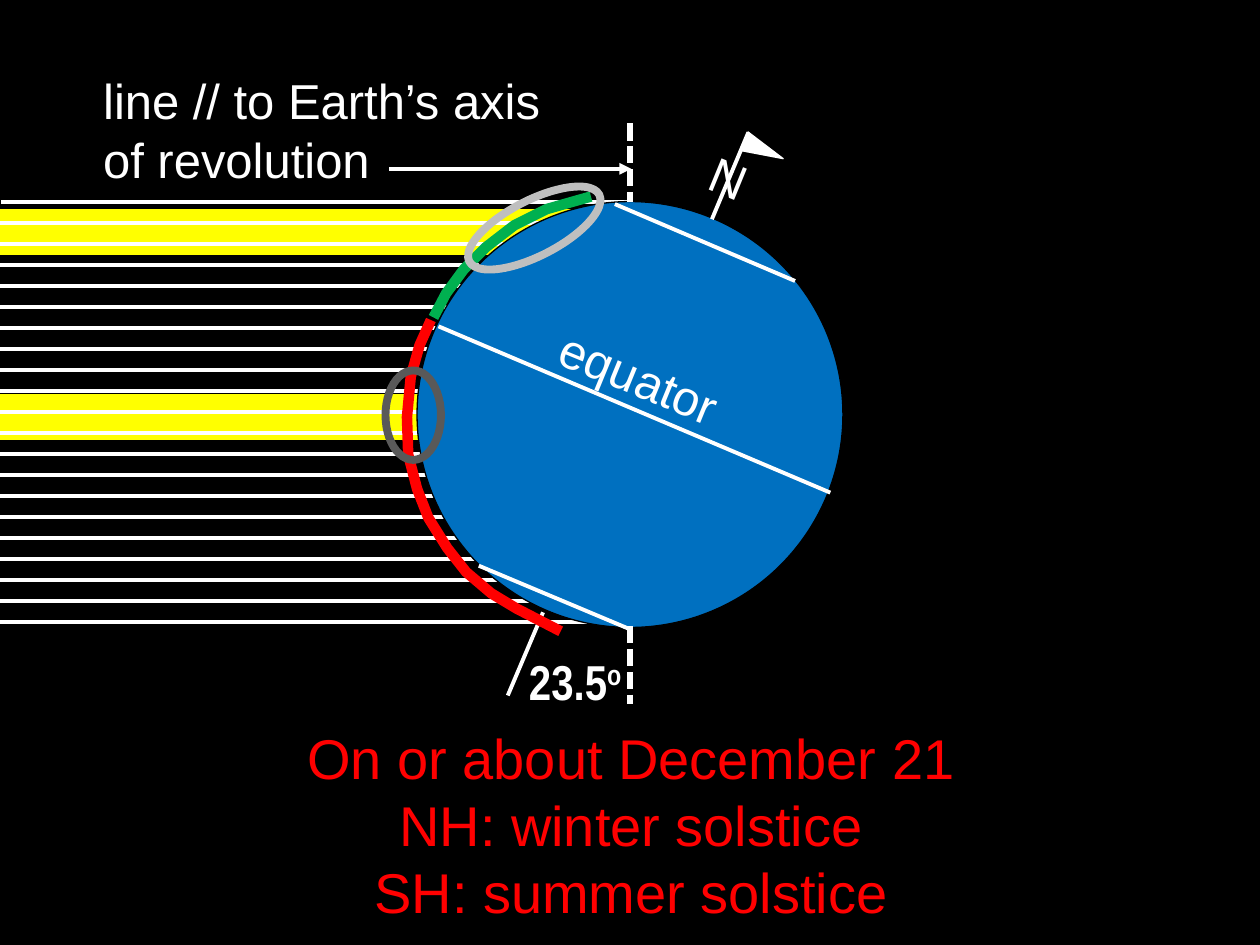
from lxml.etree import SubElement
from pptx import Presentation
from pptx.dml.color import RGBColor
from pptx.enum.dml import MSO_LINE
from pptx.enum.shapes import MSO_CONNECTOR, MSO_SHAPE as FORM
from pptx.enum.text import MSO_ANCHOR, MSO_AUTO_SIZE, PP_ALIGN as ALIGN
from pptx.oxml.ns import qn
from pptx.util import Inches, Pt

hex_color = RGBColor.from_string
WHITE, BLACK, RED = "FFFFFF", "000000", "FF0000"
TILT = 22.3

deck = Presentation()
deck.slide_width, deck.slide_height = Inches(10), Inches(7.5)
slide = deck.slides.add_slide(deck.slide_layouts[6])
slide.background.fill.solid()
slide.background.fill.fore_color.rgb = hex_color(BLACK)
canvas = slide.shapes
CELL = deck.slide_width / 100  # the slide is a grid of 100 columns by 75 rows


def draw(shapes, form, box, line=WHITE, weight=2.25, fill=None, turn=0):
    """Add a preset shape, or a straight line from (x1, y1) to (x2, y2) if form is None."""
    place = [round(n * CELL) for n in box]
    if form is None:
        item = shapes.add_connector(MSO_CONNECTOR.STRAIGHT, *place)
    else:
        item = shapes.add_shape(form, *place)
        item.rotation = turn
        item.shadow.inherit = False
        if fill:
            item.fill.solid()
            item.fill.fore_color.rgb = hex_color(fill)
        else:
            item.fill.background()
    item.line.color.rgb = hex_color(line)
    item.line.width = Pt(weight)
    if form is None:
        SubElement(item.line._ln.getparent(), qn("a:effectLst"))
    return item


def write(shapes, box, lines, size=28, color=WHITE, font="Arial", align=ALIGN.LEFT, turn=0):
    label = shapes.add_textbox(*[round(n * CELL) for n in box])
    label.rotation = turn
    frame = label.text_frame
    frame.word_wrap = False
    frame.auto_size = MSO_AUTO_SIZE.SHAPE_TO_FIT_TEXT
    frame.vertical_anchor = MSO_ANCHOR.MIDDLE
    frame.text = "\n".join(lines)
    for paragraph in frame.paragraphs:
        paragraph.alignment = align
        for name, value in {"size": Pt(size), "name": font}.items():
            setattr(paragraph.runs[0].font, name, value)
        paragraph.runs[0].font.color.rgb = hex_color(color)
    return frame


# Sunlight: two equal beams and evenly spaced parallel rays
for beam in [(-3.2, 31.2, 38.8, 3.8), (-2.9, 16.5, 51.2, 3.8)]:
    draw(canvas, FORM.RECTANGLE, beam, BLACK, 0.75, "FFFF00")

ray_ends = [
    (50.1, 0.1), (48.5, -1.2), (46.8, -1.2), (45.1, -2.1), (43.5, -1.8), (41.8, -1.5),
    (40.1, -3.2), (38.5, -2.2), (36.8, -2.1), (35.1, -5.2), (34.2, -5.4), (34.3, -4.8),
    (39.5, -3.8), (37.8, -5.5), (36.1, -2.5), (42.3, -1), (40.6, -2.7), (38.9, -4.3),
    (42.1, -1.2), (43.6, -3), (47.1, -3.4),
]
rays = canvas.add_group_shape().shapes
for i, (right, left) in enumerate(ray_ends):
    row = 16 + i * 5 / 3
    draw(rays, None, (right, row, left, row))

write(canvas, (7.2, 5.1, 38.2, 10.4), ["line // to Earth’s axis", "of revolution"])

# Earth, its axis and the line parallel to the axis of revolution
draw(canvas, FORM.OVAL, (33.1, 16, 33.8, 33.8), BLACK, 0.75, "0070C0")
draw(canvas, None, (43.1, 48.6, 40.3, 55.2))
for top, bottom in [(9.8, 16), (49.7, 55.9)]:
    draw(canvas, None, (50, top, 50, bottom), weight=3.25).line.dash_style = MSO_LINE.SQUARE_DOT

north = canvas.add_group_shape().shapes
write(north, (55.5, 11.2, 4.9, 5.7), ["N"], turn=TILT)
draw(north, None, (59.4, 10.5, 56.5, 17.4))
draw(north, FORM.ISOSCELES_TRIANGLE, (59.8, 10.2, 1.6, 3.4), weight=0.75, fill=WHITE, turn=114)

angle = write(canvas, (41, 51.2, 9.6, 5.7), ["23.5"], font="Arial Narrow").paragraphs[0]
degree = angle.add_run()
degree.text = "o"
degree.font.size, degree.font.name = Pt(28), "Arial Narrow"
degree.font.color.rgb = hex_color(WHITE)
degree.font._element.set("baseline", "30000")
for run in angle.runs:
    run.font.bold = True

pointer = draw(canvas, None, (30.9, 13.4, 50.1, 13.4))
SubElement(pointer.line._ln, qn("a:tailEnd"), type="triangle")

# Lit arcs of the northern and southern hemispheres
arcs = {
    "00B050": [(34.4, 25.2), (35.4, 23.3), (36.8, 21.4), (38.6, 19.6), (40.8, 17.9),
               (43.4, 16.6), (46.9, 15.6)],
    RED: [(34.2, 25.4), (33.3, 27.4), (32.6, 29.9), (32.3, 33.1), (32.4, 36.1), (33.1, 38.8),
          (34, 41.1), (35.5, 43.5), (37, 45.4), (39, 47.1), (41, 48.3), (44.1, 49.9), (44.5, 50.1)],
}
for color, knots in arcs.items():
    points = [(round(x * CELL), round(y * CELL)) for x, y in knots]
    outline = canvas.build_freeform(*points[0])
    outline.add_line_segments(points[1:], close=False)
    arc = outline.convert_to_shape()
    arc.shadow.inherit = False
    arc.fill.background()
    arc.line.color.rgb = hex_color(color)
    arc.line.width = Pt(6)
    SubElement(arc.line._ln, qn("a:round"))

# Parallels of latitude
equator = canvas.add_group_shape().shapes
draw(equator, None, (34.8, 25.9, 65.9, 39.1))
write(equator, (43.2, 27.1, 15.4, 5.7), ["equator"], turn=TILT)
for circle in [(38, 44.9, 49.9, 49.9), (48.8, 16.2, 63.1, 22.3)]:
    draw(canvas, None, circle)

write(canvas, (23.2, 56.8, 53.8, 17.2),
      ["On or about December 21", "NH: winter solstice", "SH: summer solstice"],
      size=32, color=RED, align=ALIGN.CENTER)

# Rings around the areas where the beams land
draw(canvas, FORM.OVAL, (30.6, 29.4, 4.4, 7.1), "595959", 4.5)
draw(canvas, FORM.OVAL, (40.2, 12.3, 4.4, 11.6), "BFBFBF", 4.5, turn=62.8)

deck.save("out.pptx")
